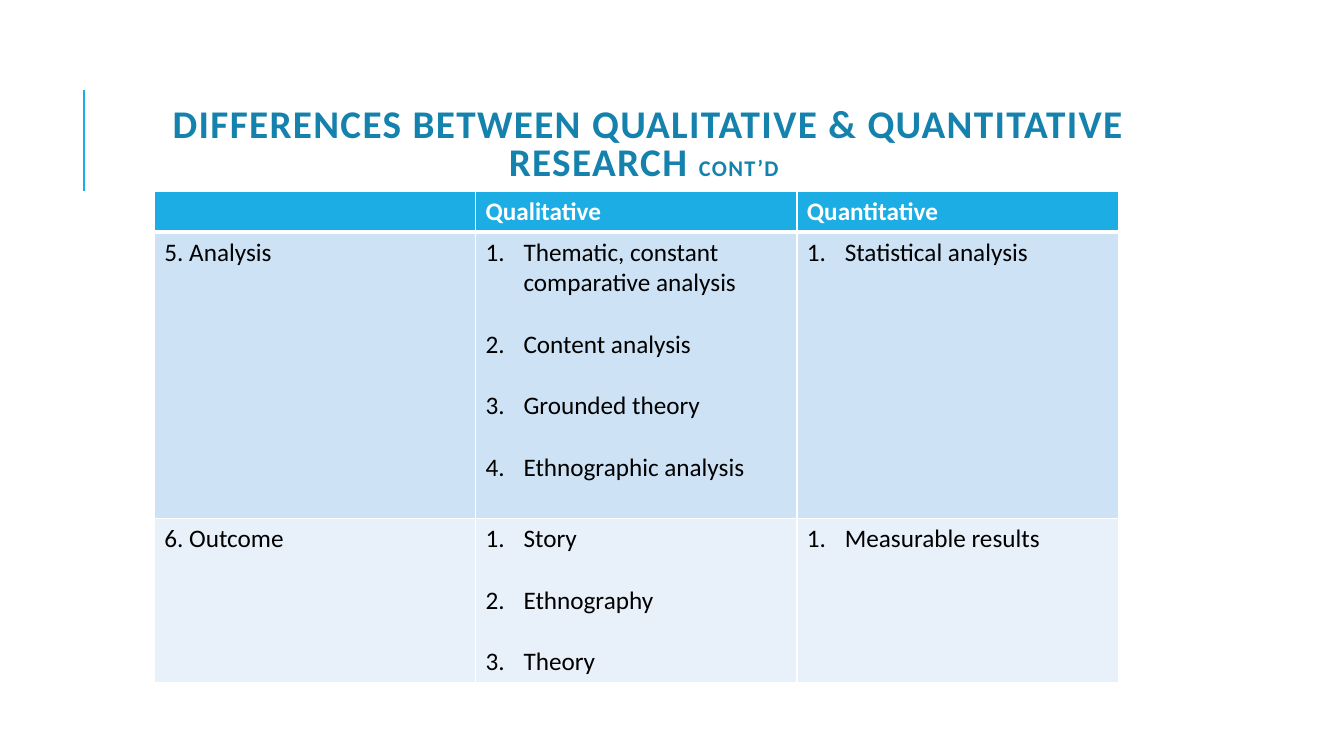
from lxml import etree
from pptx import Presentation
from pptx.dml.color import RGBColor
from pptx.enum.shapes import MSO_CONNECTOR
from pptx.enum.text import MSO_ANCHOR, PP_ALIGN
from pptx.oxml.ns import qn
from pptx.util import Pt

PX = 9525  # EMU per px, 96 px to the inch
STRAIGHT = MSO_CONNECTOR.STRAIGHT
MIDDLE = MSO_ANCHOR.MIDDLE
LEFT, CENTER = PP_ALIGN.LEFT, PP_ALIGN.CENTER

FONT = "Calibri"
ACCENT = RGBColor(0x1C, 0xAD, 0xE4)
TITLE_BLUE = RGBColor(0x14, 0x82, 0xAC)
BAND_DARK = RGBColor(0xCD, 0xE3, 0xF5)
BAND_LIGHT = RGBColor(0xE8, 0xF1, 0xFA)
WHITE = RGBColor(0xFF, 0xFF, 0xFF)
BLACK = RGBColor(0x00, 0x00, 0x00)

INDENT = 36
ITEM_GAP = 22  # points, one line of body text
HEADERS = ["", "Qualitative", "Quantitative"]
ROWS = [
    ("5. Analysis",
     ["Thematic, constant comparative analysis", "Content analysis",
      "Grounded theory", "Ethnographic analysis"],
     ["Statistical analysis"]),
    ("6. Outcome",
     ["Story", "Ethnography", "Theory"],
     ["Measurable results"]),
]
ROW_HEIGHTS = [39, 273, 156]


def px(*lengths):
    return [length * PX for length in lengths]


def add_text(paragraph, text, size=18, color=BLACK, bold=False, align=LEFT, spacing=0):
    paragraph.alignment = align
    run = paragraph.add_run()
    run.text = text
    font = run.font
    font.name, font.size, font.bold = FONT, Pt(size), bold
    font.color.rgb = color
    if spacing:
        run._r.get_or_add_rPr().set("spc", str(spacing * 100))


def number_paragraph(paragraph):
    properties = paragraph._p.get_or_add_pPr()
    properties.set("marL", str(INDENT * PX))
    properties.set("indent", str(-INDENT * PX))
    bullet_font = etree.SubElement(properties, qn("a:buFont"))
    bullet_font.set("typeface", "+mj-lt")
    etree.SubElement(properties, qn("a:buAutoNum")).set("type", "arabicPeriod")


def style_cell(cell, fill, top=1, bottom=1):
    cell.fill.solid()
    cell.fill.fore_color.rgb = fill
    properties = cell._tc.get_or_add_tcPr()
    borders = {"a:lnL": 1, "a:lnR": 1, "a:lnT": top, "a:lnB": bottom}
    for position, (tag, width) in enumerate(borders.items()):
        line = etree.Element(qn(tag), w=str(Pt(width)))
        solid = etree.SubElement(line, qn("a:solidFill"))
        etree.SubElement(solid, qn("a:srgbClr")).set("val", str(WHITE))
        properties.insert(position, line)


def add_accent_line(slide, x, top, bottom):
    line = slide.shapes.add_connector(STRAIGHT, *px(x, bottom, x, top))
    line.line.color.rgb = ACCENT
    line.line.width = Pt(1.5)
    etree.SubElement(line._element.spPr, qn("a:effectLst"))


def add_title(slide, left, top, width, height):
    frame = slide.shapes.add_textbox(*px(left, top, width, height)).text_frame
    frame.word_wrap = True
    frame.vertical_anchor = MIDDLE
    paragraph = frame.paragraphs[0]
    paragraph.line_spacing = 0.8
    for text, size in [
        ("DIFFERENCES BETWEEN QUALITATIVE & QUANTITATIVE RESEARCH ", 28),
        ("CONT’D", 16),
        (" ", 28),
    ]:
        add_text(paragraph, text, size=size, color=TITLE_BLUE, bold=True,
                 align=CENTER, spacing=1)


def fill_list(cell, items):
    frame = cell.text_frame
    for index, item in enumerate(items):
        paragraph = frame.add_paragraph() if index else frame.paragraphs[0]
        if index:
            paragraph.space_before = Pt(ITEM_GAP)
        add_text(paragraph, item)
        number_paragraph(paragraph)


def add_comparison_table(slide, left, top, width):
    table = slide.shapes.add_table(
        len(ROW_HEIGHTS), len(HEADERS), *px(left, top, width, sum(ROW_HEIGHTS))).table
    for column in table.columns:
        column.width = width // len(HEADERS) * PX
    for row, height in zip(table.rows, ROW_HEIGHTS):
        row.height = height * PX

    # Header row
    for column, header in enumerate(HEADERS):
        cell = table.cell(0, column)
        style_cell(cell, ACCENT, bottom=3)
        if header:
            add_text(cell.text_frame.paragraphs[0], header, color=WHITE, bold=True)

    # Banded body rows
    for row, (label, *lists) in enumerate(ROWS, start=1):
        for column in range(len(HEADERS)):
            style_cell(table.cell(row, column), BAND_DARK if row % 2 else BAND_LIGHT,
                       top=3 if row == 1 else 1)
        add_text(table.cell(row, 0).text_frame.paragraphs[0], label)
        for column, items in enumerate(lists, start=1):
            fill_list(table.cell(row, column), items)


def main():
    presentation = Presentation()
    presentation.slide_width, presentation.slide_height = px(1280, 720)
    slide = presentation.slides.add_slide(presentation.slide_layouts[6])
    add_accent_line(slide, 80, 86, 182)
    add_title(slide, 108, 61, 1020, 157)
    add_comparison_table(slide, 147, 182, 918)
    presentation.save("out.pptx")


if __name__ == "__main__":
    main()
